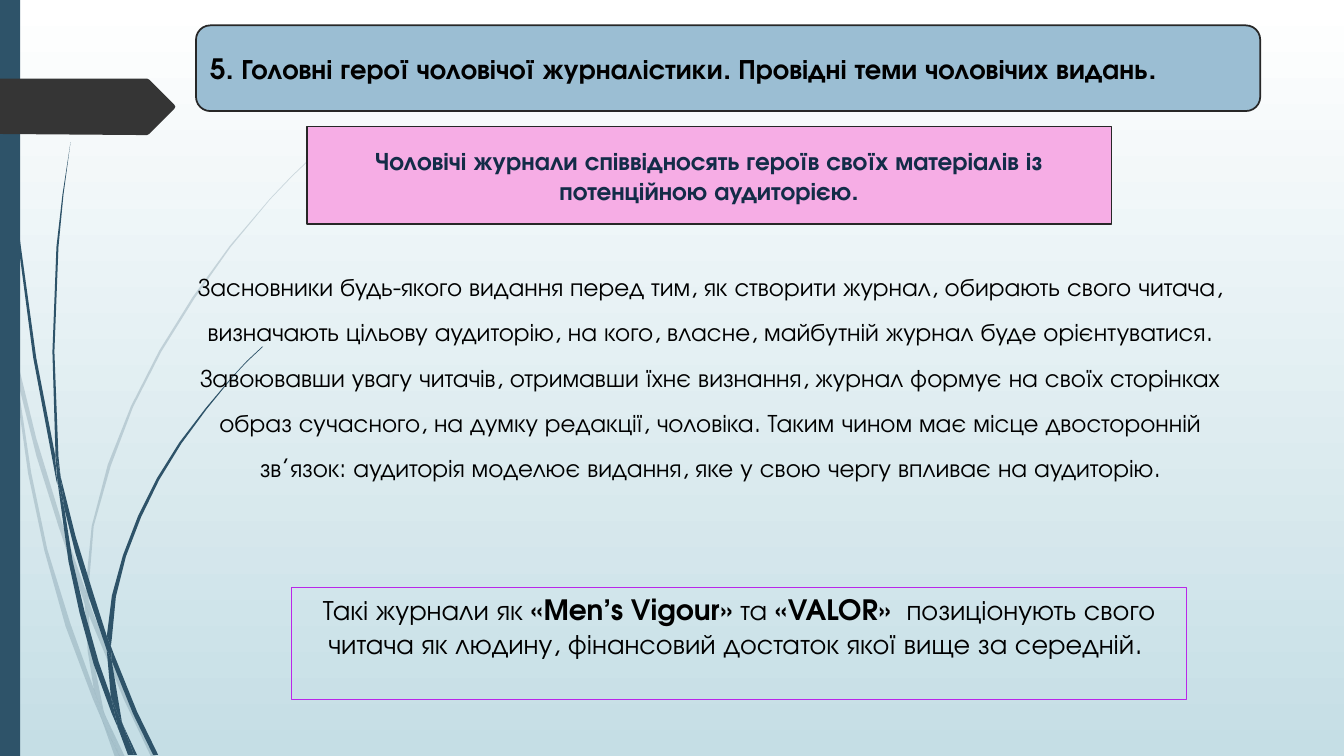
from dataclasses import dataclass
from typing import Optional

from lxml import etree
from pptx import Presentation
from pptx import util as u
from pptx.dml.color import RGBColor
from pptx.enum import shapes, text
from pptx.oxml import ns

FONT = "TeX Gyre Adventor"
WHITE = RGBColor(0xFF, 0xFF, 0xFF)
PALE_BLUE = RGBColor(0xC5, 0xDE, 0xE5)
TEAL = RGBColor(0x2E, 0x53, 0x69)
CHARCOAL = RGBColor(0x35, 0x35, 0x35)
OUTLINE = RGBColor(0x27, 0x27, 0x27)
SKY = RGBColor(0x9B, 0xBE, 0xD3)
PINK = RGBColor(0xF6, 0xAD, 0xE5)
NAVY = RGBColor(0x13, 0x2C, 0x48)
BLACK = RGBColor(0, 0, 0)
VIOLET = RGBColor(0xB9, 0x27, 0xE9)

GRID = u.Cm(2.54) / 100  # size of one step in the outlines below
SHAPE = shapes.MSO_SHAPE
ALIGN = text.PP_ALIGN
ANCHOR = text.MSO_ANCHOR

Outline = list[tuple[int, int]]


@dataclass
class Grass:
    pieces: list[Outline]
    opacity: int = 100


@dataclass
class Panel:
    """A block of text; runs are (wording, bold) pairs."""
    box: tuple[float, float, float, float]
    runs: list[tuple[str, bool]]
    size: int
    color: RGBColor = BLACK
    kind: Optional[SHAPE] = SHAPE.RECTANGLE  # None for a plain text box
    fill: Optional[RGBColor] = None
    line: Optional[RGBColor] = None
    line_width: float = 1.25
    align: ALIGN = ALIGN.CENTER
    anchor: ANCHOR = ANCHOR.MIDDLE
    spacing: float = 1.0


PALE_GRASS = Grass([
    [(11, 350), (9, 322), (0, 282), (0, 299), (10, 344)],
    [(58, 522), (84, 599), (85, 586), (62, 520), (36, 435), (14, 345), (17, 376), (36, 452)],
    [(92, 607), (88, 596), (88, 610), (123, 694), (150, 751), (155, 751), (127, 692)],
    [(119, 751), (124, 751), (105, 711)],
    [(93, 683), (70, 619), (47, 545), (31, 469), (17, 376), (11, 350), (28, 470),
     (44, 546), (65, 621), (92, 693), (101, 714), (99, 707)],
    [(84, 599), (87, 646), (93, 683), (96, 692), (105, 711), (103, 706), (91, 646),
     (88, 610), (88, 608)],
    [(88, 584), (93, 522), (110, 462), (132, 404), (160, 349), (193, 296), (229, 245),
     (268, 198), (290, 175), (312, 154), (312, 153), (289, 175), (268, 197), (228, 244),
     (191, 295), (158, 348), (130, 403), (107, 461), (91, 522), (85, 584), (85, 586), (88, 596)],
    [(101, 714), (114, 751), (119, 751)],
    [(88, 608), (88, 610), (88, 596), (85, 586), (84, 599)],
    [(96, 692), (93, 683), (99, 707), (101, 714), (119, 751), (105, 711)],
], 20)

DARK_GRASS = Grass([
    [(7, 110), (17, 233), (33, 355), (56, 477), (57, 481), (55, 457), (55, 453), (36, 355),
     (19, 232), (8, 109), (5, 48), (4, 0), (3, 0), (4, 48)],
    [(88, 592), (106, 645), (106, 633), (106, 631), (93, 590), (75, 532), (60, 472),
     (64, 505), (75, 549)],
    [(113, 649), (110, 641), (111, 656), (132, 708), (152, 749), (157, 749), (136, 706)],
    [(110, 691), (98, 657), (84, 607), (72, 556), (64, 505), (57, 477), (68, 557),
     (79, 608), (93, 659), (111, 708), (117, 722), (116, 717)],
    [(60, 472), (58, 453), (54, 349), (58, 245), (63, 193), (70, 141), (62, 193),
     (56, 245), (52, 349), (55, 449)],
    [(133, 749), (136, 749), (122, 719)],
    [(57, 477), (64, 505), (60, 472), (55, 449), (55, 453)],
    [(111, 633), (115, 592), (125, 552), (140, 513), (158, 476), (180, 440), (205, 406),
     (231, 374), (245, 359), (261, 344), (260, 344), (245, 358), (231, 373), (204, 405),
     (178, 439), (156, 474), (137, 512), (122, 551), (111, 591), (106, 631), (110, 641)],
    [(117, 722), (127, 749), (131, 749)],
    [(106, 645), (110, 691), (116, 706), (122, 719), (121, 716), (111, 656), (109, 651)],
    [(106, 645), (109, 651), (111, 656), (110, 641), (106, 631)],
    [(116, 706), (110, 691), (116, 717), (117, 722), (130, 749), (133, 749), (122, 719)],
])

ARROW = [(173, 108), (148, 133), (146, 134), (136, 134), (0, 133), (0, 78), (136, 78),
         (146, 78), (148, 79), (173, 104), (174, 106)]

PANELS = [
    Panel((4.94, 0.64, 26.82, 2.16),
          [("5. Головні герої чоловічої журналістики. Провідні теми чоловічих видань.", True)],
          20, kind=SHAPE.ROUNDED_RECTANGLE, fill=SKY, line=OUTLINE, align=ALIGN.LEFT),
    Panel((7.73, 3.19, 20.28, 2.46),
          [("Чоловічі журнали співвідносять героїв своїх матеріалів із "
            "потенційною аудиторією.", True)],
          18, color=NAVY, fill=PINK, line=OUTLINE),
    Panel((4.43, 6.33, 26.95, 7.04),
          [("Засновники будь-якого видання перед тим, як створити журнал, обирають "
            "свого читача, визначають цільову аудиторію, на кого, власне, майбутній "
            "журнал буде орієнтуватися. Завоювавши увагу читачів, отримавши їхнє "
            "визнання, журнал формує на своїх сторінках образ сучасного, на думку "
            "редакції, чоловіка. Таким чином має місце двосторонній зв’язок: "
            "аудиторія моделює видання, яке у свою чергу впливає на аудиторію.", False)],
          18, kind=None, anchor=ANCHOR.TOP, spacing=1.5),
    Panel((7.34, 14.81, 22.57, 2.82),
          [("Такі журнали як ", False), ("«Men’s Vigour» ", True), ("та ", False),
           ("«VALOR»  ", True),
           ("позиціонують свого читача як людину, фінансовий достаток якої "
            "вище за середній. ", False)],
          20, line=VIOLET, line_width=0.75, anchor=ANCHOR.TOP),
]


def paint(sp, color: RGBColor, opacity: int = 100) -> None:
    sp.shadow.inherit = False
    sp.line.fill.background()
    sp.fill.solid()
    sp.fill.fore_color.rgb = color
    if opacity < 100:
        srgb = sp._element.spPr.find(".//" + ns.qn("a:srgbClr"))
        etree.SubElement(srgb, ns.qn("a:alpha")).set("val", str(opacity * 1000))


def draw_outline(slide, points: Outline, color: RGBColor, opacity: int = 100) -> None:
    builder = slide.shapes.build_freeform(*points[0], scale=GRID)
    builder.add_line_segments(points[1:], close=True)
    paint(builder.convert_to_shape(), color, opacity)


def draw_panel(slide, panel: Panel) -> None:
    box = [u.Cm(v) for v in panel.box]
    if panel.kind is None:
        sp = slide.shapes.add_textbox(*box)
    else:
        sp = slide.shapes.add_shape(panel.kind, *box)
        sp.shadow.inherit = False
        if panel.fill is None:
            sp.fill.background()
        else:
            sp.fill.solid()
            sp.fill.fore_color.rgb = panel.fill
        sp.line.color.rgb = panel.line
        sp.line.width = u.Pt(panel.line_width)
    tf = sp.text_frame
    tf.word_wrap = True
    tf.vertical_anchor = panel.anchor
    p = tf.paragraphs[0]
    p.alignment = panel.align
    p.line_spacing = panel.spacing
    p.font.name = FONT
    p.font.size = u.Pt(panel.size)
    p.font.color.rgb = panel.color
    for wording, bold in panel.runs:
        r = p.add_run()
        r.text = wording
        # Runs carry the full look so that it overrides the shape style
        r.font.name = FONT
        r.font.size = u.Pt(panel.size)
        r.font.color.rgb = panel.color
        r.font.bold = bold


def main() -> None:
    prs = Presentation()
    prs.slide_width, prs.slide_height = u.Cm(33.87), u.Cm(19.05)
    slide = prs.slides.add_slide(prs.slide_layouts[6])

    # Background gradient, top to bottom
    fill = slide.background.fill
    fill.gradient()
    fill.gradient_angle = 270
    for stop, position, color in zip(fill.gradient_stops, (0, 1), (WHITE, PALE_BLUE)):
        stop.position = position
        stop.color.rgb = color

    # Grass, side bar and page arrow
    for grass in (PALE_GRASS, DARK_GRASS):
        for piece in grass.pieces:
            draw_outline(slide, piece, TEAL, grass.opacity)
    bar = slide.shapes.add_shape(SHAPE.RECTANGLE, 0, 0, u.Cm(0.51), prs.slide_height)
    paint(bar, TEAL)
    draw_outline(slide, ARROW, CHARCOAL)

    # Text
    for panel in PANELS:
        draw_panel(slide, panel)

    prs.save("out.pptx")


if __name__ == "__main__":
    main()
